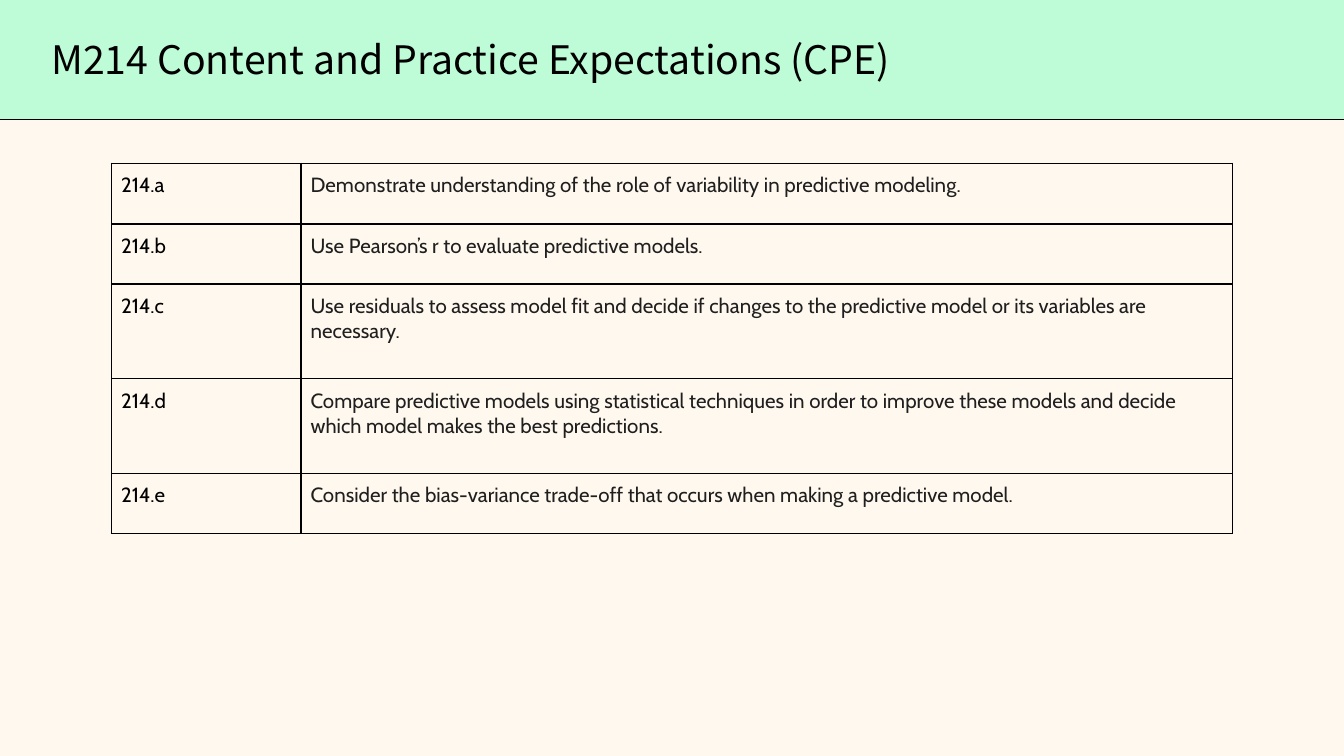
import pptx
import pptx.dml.color
import pptx.enum.shapes
import pptx.enum.text
import pptx.oxml.ns
import pptx.util
from lxml import etree

Cm = pptx.util.Cm
Pt = pptx.util.Pt
RGBColor = pptx.dml.color.RGBColor
qn = pptx.oxml.ns.qn

CREAM = RGBColor(0xFF, 0xF8, 0xEF)
MINT = RGBColor(0xBD, 0xFC, 0xD7)
BLACK = RGBColor(0, 0, 0)
CHARCOAL = RGBColor(0x1F, 0x1F, 0x1F)

SLIDE_WIDTH, SLIDE_HEIGHT = Cm(25.4), Cm(14.29)
HEADER_HEIGHT = Cm(2.26)
HEADING = "M214 Content and Practice Expectations (CPE)"
HEADING_FONT = {"name": "Noto Sans CJK KR", "size": Pt(21), "bold": False}
EXPECTATION_FONT = {"name": "Cabin", "size": Pt(11), "bold": False}
COLUMN_WIDTHS = (Cm(3.58), Cm(17.6))
SHORT_ROW, TALL_ROW = Cm(1.14), Cm(1.79)
CELL_PADDING = Cm(0.18)
EXPECTATIONS = (
    ("214.a", "Demonstrate understanding of the role of variability in predictive modeling.", SHORT_ROW),
    ("214.b", "Use Pearson’s r to evaluate predictive models.", SHORT_ROW),
    ("214.c", "Use residuals to assess model fit and decide if changes to the predictive model "
              "or its variables are necessary.", TALL_ROW),
    ("214.d", "Compare predictive models using statistical techniques in order to improve these "
              "models and decide which model makes the best predictions.", TALL_ROW),
    ("214.e", "Consider the bias-variance trade-off that occurs when making a predictive model.", SHORT_ROW),
)


def apply_format(target, values):
    for attribute, value in values.items():
        setattr(target, attribute, value)


def write_text(frame, text, font_format, color):
    paragraph = frame.paragraphs[0]
    run = paragraph.add_run()
    run.text = text
    apply_format(run.font, font_format)
    run.font.color.rgb = color
    return paragraph


def add_header_band(slide):
    band = slide.shapes.add_shape(
        pptx.enum.shapes.MSO_SHAPE.RECTANGLE, 0, 0, SLIDE_WIDTH, HEADER_HEIGHT)
    band.shadow.inherit = False
    band.fill.solid()
    band.fill.fore_color.rgb = MINT
    band.line.fill.background()


def place_heading(slide):
    heading = slide.shapes.title
    slide.shapes._spTree.append(heading._element)
    apply_format(heading, {"left": Cm(0.97), "top": Cm(0.76),
                           "width": Cm(18.2), "height": Cm(0.81)})
    apply_format(heading.text_frame, {
        "margin_left": 0, "margin_right": 0, "margin_top": 0, "margin_bottom": 0,
        "word_wrap": True, "auto_size": pptx.enum.text.MSO_AUTO_SIZE.NONE,
        "vertical_anchor": pptx.enum.text.MSO_ANCHOR.MIDDLE})
    paragraph = write_text(heading.text_frame, HEADING, HEADING_FONT, BLACK)
    apply_format(paragraph, {"alignment": pptx.enum.text.PP_ALIGN.LEFT, "line_spacing": 0.9})


def add_header_rule(slide):
    rule = slide.shapes.add_connector(
        pptx.enum.shapes.MSO_CONNECTOR.STRAIGHT, SLIDE_WIDTH, HEADER_HEIGHT, 0, HEADER_HEIGHT)
    rule.line.color.rgb = BLACK
    rule.line.width = Pt(0.75)
    etree.SubElement(rule._element.spPr, qn("a:effectLst"))


def add_borders(cell):
    properties = cell._tc.get_or_add_tcPr()
    for side in ("a:lnL", "a:lnR", "a:lnT", "a:lnB"):
        border = etree.SubElement(properties, qn(side), w=str(Pt(1)))
        fill = etree.SubElement(border, qn("a:solidFill"))
        etree.SubElement(fill, qn("a:srgbClr"), val=str(BLACK))


def fill_cell(cell, text, color):
    apply_format(cell, {f"margin_{side}": CELL_PADDING
                        for side in ("left", "right", "top", "bottom")})
    add_borders(cell)
    cell.fill.background()
    write_text(cell.text_frame, text, EXPECTATION_FONT, color)


def add_expectations(slide):
    table_height = sum(height for _, _, height in EXPECTATIONS)
    expectations = slide.shapes.add_table(
        len(EXPECTATIONS), len(COLUMN_WIDTHS), Cm(2.11), Cm(3.09),
        sum(COLUMN_WIDTHS), table_height).table
    apply_format(expectations, {"first_row": False, "horz_banding": False})
    for column, width in zip(expectations.columns, COLUMN_WIDTHS):
        column.width = width
    for row, (code, expectation, height) in zip(expectations.rows, EXPECTATIONS):
        row.height = height
        fill_cell(row.cells[0], code, BLACK)
        fill_cell(row.cells[1], expectation, CHARCOAL)


def main():
    presentation = pptx.Presentation()
    apply_format(presentation, {"slide_width": SLIDE_WIDTH, "slide_height": SLIDE_HEIGHT})
    slide = presentation.slides.add_slide(presentation.slide_layouts[5])
    slide.background.fill.solid()
    slide.background.fill.fore_color.rgb = CREAM
    add_header_band(slide)
    place_heading(slide)
    add_header_rule(slide)
    add_expectations(slide)
    presentation.save("out.pptx")


if __name__ == "__main__":
    main()
